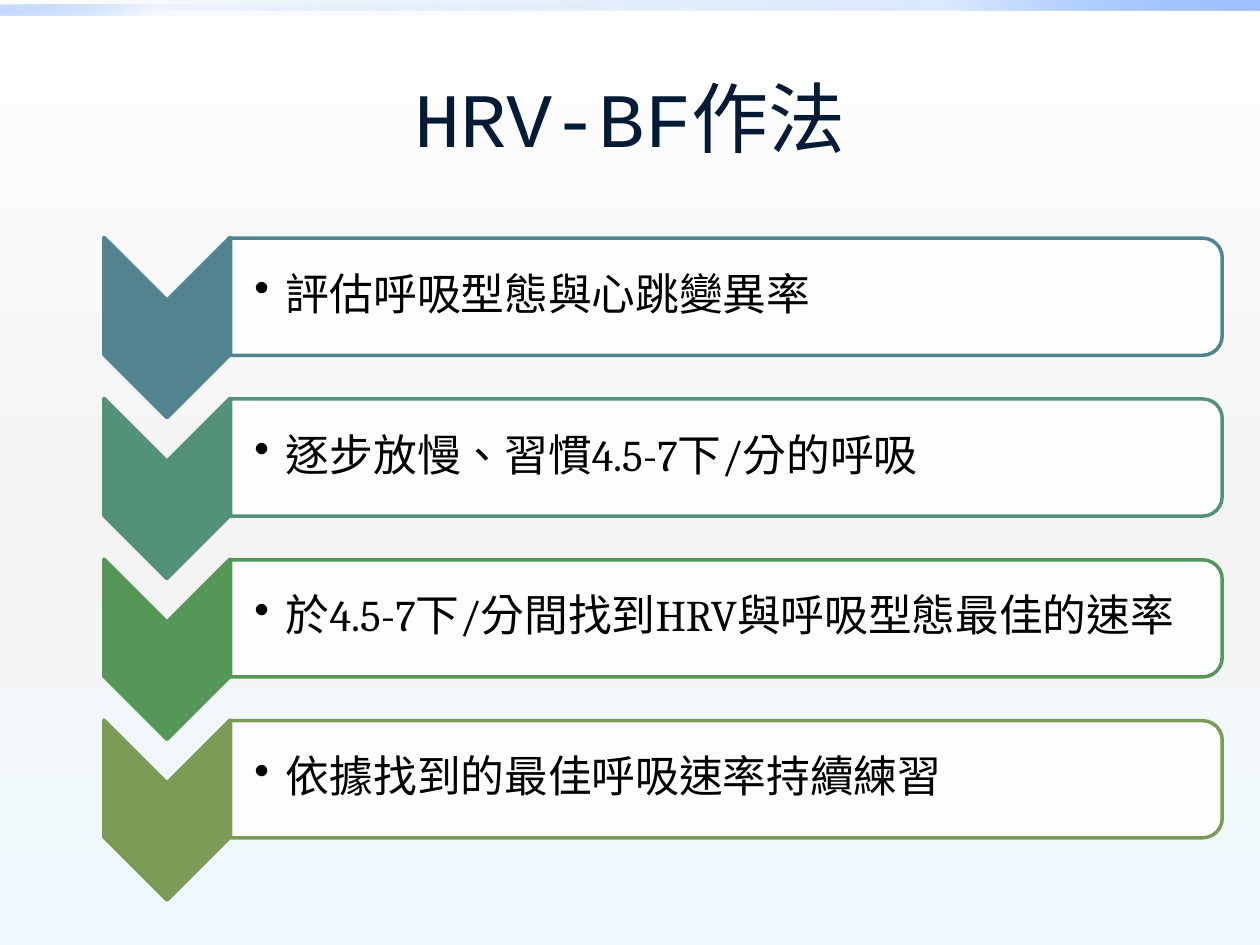
from dataclasses import dataclass

from lxml import etree
from pptx import Presentation, util as u
from pptx.dml.color import RGBColor
from pptx.enum import lang, shapes, text
from pptx.oxml.ns import qn


@dataclass(frozen=True)
class Theme:
    title_color: str = "001B36"
    body_color: str = "000000"
    panel: str = "FFFFFF"
    panel_opacity: int = 90
    title_font: str = "Courier New"
    body_font: str = "Cambria"
    title_size: int = 44
    body_size: int = 25
    # Gradient stops: position, colour, opacity (all in percent)
    background: tuple = ((0, "FFFFFF", 100), (55, "F4F4F4", 100), (100, "EEF9FF", 100))
    wide_bar: tuple = ((0, "0058B7", 0), (75, "4F95FF", 20), (100, "9EC2FF", 100))
    half_bar: tuple = ((0, "0058B7", 0), (75, "4F95FF", 5), (100, "9EC2FF", 60))


THEME = Theme()
STEPS = [
    ("評估呼吸型態與心跳變異率", "51848E"),
    ("逐步放慢、習慣4.5-7下/分的呼吸", "539279"),
    ("於4.5-7下/分間找到HRV與呼吸型態最佳的速率", "559757"),
    ("依據找到的最佳呼吸速率持續練習", "7B9B57"),
]


def apply_gradient(properties, stops, angle):
    """Swap the solid fill in a properties element for a linear gradient."""
    gradient = etree.Element(qn("a:gradFill"), rotWithShape="1")
    stop_list = etree.SubElement(gradient, qn("a:gsLst"))
    for position, color, opacity in stops:
        stop = etree.SubElement(stop_list, qn("a:gs"), pos=str(position * 1000))
        rgb = etree.SubElement(stop, qn("a:srgbClr"), val=color)
        etree.SubElement(rgb, qn("a:alpha"), val=str(opacity * 1000))
    etree.SubElement(gradient, qn("a:lin"), ang=str(angle * 60000), scaled="0")
    properties.replace(properties.find(qn("a:solidFill")), gradient)


def add_text(slide, box, words, frame_format, paragraph_format, font_format, color, bullet=None):
    frame = slide.shapes.add_textbox(*box).text_frame
    paragraph = frame.paragraphs[0]
    paragraph.text = words
    if bullet:
        properties = paragraph._p.get_or_add_pPr()
        properties.set("marL", str(u.Inches(0.25)))
        properties.set("indent", str(u.Inches(-0.25)))
        etree.SubElement(properties, qn("a:buChar"), char=bullet)
    font = paragraph.runs[0].font
    for target, values in ((frame, frame_format), (paragraph, paragraph_format), (font, font_format)):
        for name, value in values.items():
            setattr(target, name, value)
    font.color.rgb = RGBColor.from_string(color)
    font.language_id = lang.MSO_LANGUAGE_ID.TRADITIONAL_CHINESE


presentation = Presentation()
presentation.slide_width, presentation.slide_height = u.Inches(10), u.Inches(7.5)
slide = presentation.slides.add_slide(presentation.slide_layouts[6])

slide.background.fill.solid()
apply_gradient(slide._element.find(".//" + qn("p:bgPr")), THEME.background, 90)

for top, width, stops, angle in ((0, 10, THEME.wide_bar, 315), (0.04, 5, THEME.half_bar, 135)):
    bar = slide.shapes.add_shape(shapes.MSO_SHAPE.RECTANGLE, 0, u.Inches(top), u.Inches(width), u.Inches(0.08))
    bar.shadow.inherit = False
    bar.line.fill.background()
    bar.fill.solid()
    apply_gradient(bar._element.spPr, stops, angle)

add_text(
    slide,
    (u.Inches(0.5), u.Inches(0.3), u.Inches(9), u.Inches(1.25)),
    "HRV-BF作法",
    {"word_wrap": True, "vertical_anchor": text.MSO_ANCHOR.MIDDLE},
    {"alignment": text.PP_ALIGN.CENTER},
    {"name": THEME.title_font, "size": u.Pt(THEME.title_size)},
    THEME.title_color,
)

step_frame = {
    "word_wrap": True,
    "vertical_anchor": text.MSO_ANCHOR.MIDDLE,
    "margin_left": u.Inches(0.19),
    "margin_right": u.Inches(0.02),
    "margin_top": u.Inches(0.02),
    "margin_bottom": u.Inches(0.02),
}
step_paragraph = {"line_spacing": 0.9, "space_after": u.Pt(3.75)}
step_font = {"name": THEME.body_font, "size": u.Pt(THEME.body_size)}

step_pitch = u.Inches(3.83) / 3
for index, (words, color) in enumerate(STEPS):
    offset = round(index * step_pitch)
    # Both outlines are turned a quarter, so width and height swap on the slide
    for kind, left, top, width, height, fill, opacity in (
        (shapes.MSO_SHAPE.CHEVRON, 0.61, 2.1, 1.43, 1, color, 100),
        (shapes.MSO_SHAPE.ROUND_2_SAME_RECTANGLE, 5.3, -1.58, 0.93, 7.87, THEME.panel, THEME.panel_opacity),
    ):
        shape = slide.shapes.add_shape(
            kind, u.Inches(left), u.Inches(top) + offset, u.Inches(width), u.Inches(height)
        )
        shape.rotation = 90
        shape.shadow.inherit = False
        shape.fill.solid()
        shape.fill.fore_color.rgb = RGBColor.from_string(fill)
        rgb = shape._element.spPr.find(qn("a:solidFill")).find(qn("a:srgbClr"))
        etree.SubElement(rgb, qn("a:alpha"), val=str(opacity * 1000))
        shape.line.color.rgb = RGBColor.from_string(color)
        shape.line.width = u.Pt(2)

    box = (u.Inches(1.83), u.Inches(1.93) + offset, u.Inches(7.83), u.Inches(0.84))
    add_text(slide, box, words, step_frame, step_paragraph, step_font, THEME.body_color, bullet="•")

presentation.save("out.pptx")
